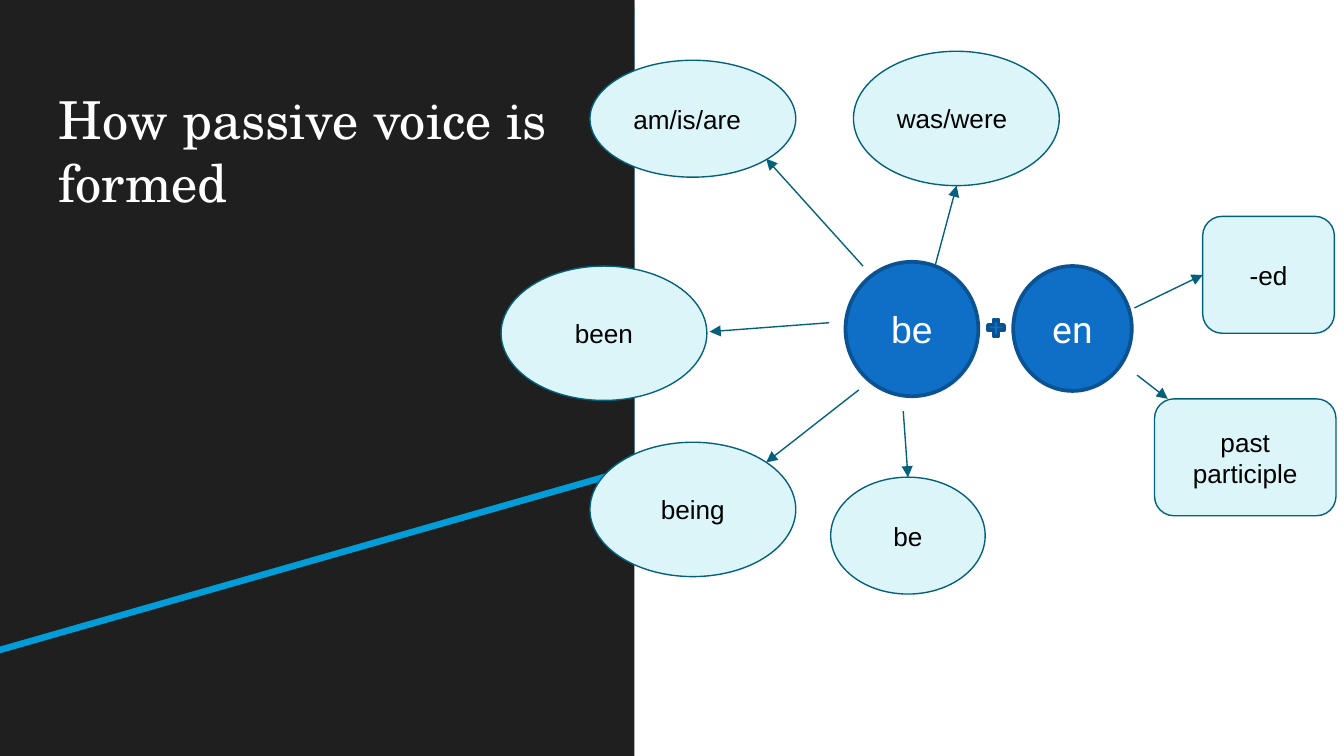
from lxml.etree import SubElement
from pptx import Presentation
from pptx.dml.color import RGBColor
from pptx.enum.shapes import MSO_CONNECTOR as Link, MSO_SHAPE as Kind
from pptx.enum.text import MSO_ANCHOR as Anchor, MSO_AUTO_SIZE as Fit, PP_ALIGN as Align
from pptx.oxml.ns import qn
from pptx.util import Cm, Pt

WHITE = RGBColor(0xFF, 0xFF, 0xFF)
BLACK = RGBColor(0x00, 0x00, 0x00)
DARK = RGBColor(0x1F, 0x1F, 0x1F)
SKY = RGBColor(0x00, 0x9D, 0xD9)
PALE = RGBColor(0xDB, 0xF5, 0xF9)
TEAL = RGBColor(0x04, 0x61, 0x7B)
BLUE = RGBColor(0x0F, 0x6F, 0xC6)
NAVY = RGBColor(0x0B, 0x52, 0x92)

WIDE, HIGH = 25.4, 14.29
PANEL = 11.99


class Board:
    """Holds the slide and the shared look of its parts."""

    def __init__(self, deck):
        self.slide = deck.slides.add_slide(deck.slide_layouts[5])
        self.shapes = self.slide.shapes

    def paint(self, shape, fill, line=None, width=0.75):
        shape.shadow.inherit = False
        shape.fill.solid()
        shape.fill.fore_color.rgb = fill
        if line is None:
            shape.line.fill.background()
        else:
            shape.line.color.rgb = line
            shape.line.width = Pt(width)

    def label(self, shape, text, size, color, font="Arial",
              align=Align.CENTER, anchor=Anchor.MIDDLE, inset=0.25):
        frame = shape.text_frame
        frame.text = text
        frame.word_wrap = True
        frame.auto_size = Fit.NONE
        frame.vertical_anchor = anchor
        frame.margin_left = frame.margin_right = Cm(0.25)
        frame.margin_top = frame.margin_bottom = Cm(inset)
        para = frame.paragraphs[0]
        para.alignment = align
        face = para.runs[0].font
        face.name, face.size, face.color.rgb = font, Pt(size), color

    def title(self, text, *box):
        shape = self.shapes.title
        shape.left, shape.top, shape.width, shape.height = map(Cm, box)
        self.label(shape, text, 28, WHITE, "TeX Gyre Schola", Align.LEFT, Anchor.TOP)
        # Bring the title in front of the panel
        self.shapes._spTree.append(shape._element)

    def area(self, points, fill):
        dots = [(Cm(x), Cm(y)) for x, y in points]
        outline = self.shapes.build_freeform(*dots[0])
        outline.add_line_segments(dots[1:], close=True)
        self.paint(outline.convert_to_shape(), fill)

    def block(self, kind, box, fill, line=None, width=0.75):
        shape = self.shapes.add_shape(kind, *map(Cm, box))
        self.paint(shape, fill, line, width)
        return shape

    def leaf(self, kind, text, box, align=Align.CENTER):
        shape = self.block(kind, box, PALE, TEAL)
        self.label(shape, text, 14, BLACK, align=align)
        return shape

    def core(self, text, box, font):
        shape = self.block(Kind.OVAL, box, BLUE, NAVY, 2)
        self.label(shape, text, 20, WHITE, font, inset=0.13)

    def arrow(self, start, end, goal=None, side=0):
        line = self.shapes.add_connector(Link.STRAIGHT, *map(Cm, start + end))
        if goal is not None:
            line.end_connect(goal, side)
        line.line.color.rgb = TEAL
        line.line.width = Pt(0.75)
        SubElement(line.line._get_or_add_ln(), qn("a:tailEnd"), type="triangle")
        SubElement(line._element.spPr, qn("a:effectLst"))


def main():
    deck = Presentation()
    deck.slide_width, deck.slide_height = Cm(WIDE), Cm(HIGH)
    board = Board(deck)

    # Dark panel with a slanted stripe
    board.block(Kind.RECTANGLE, (0, 0, PANEL, HIGH), DARK)
    for drop, fill in ((0.13, SKY), (0, DARK)):
        board.area([(0, drop), (PANEL, drop), (PANEL, 8.79 + drop), (0, 12.22 + drop)], fill)
    board.title("How passive voice is formed", 0.86, 1.4, 10.29, 6.96)

    # Forms of the verb
    board.leaf(Kind.OVAL, "am/is/are", (11.15, 1.14, 3.89, 2.21), Align.LEFT)
    was = board.leaf(Kind.OVAL, "was/were", (16.13, 0.97, 3.89, 2.54), Align.LEFT)
    board.leaf(Kind.OVAL, "been", (9.47, 5.03, 3.89, 2.54))
    board.leaf(Kind.OVAL, "being", (11.15, 8.36, 3.89, 2.54))
    base = board.leaf(Kind.OVAL, "be", (15.7, 9.02, 2.92, 2.21))

    # Endings
    past = board.leaf(Kind.ROUNDED_RECTANGLE, "-ed", (22.73, 4.09, 2.49, 2.21))
    board.leaf(Kind.ROUNDED_RECTANGLE, "past participle", (21.82, 7.54, 3.43, 2.21))

    # Arrows from the two cores; ellipses number their sites differently,
    # so only a top site (0) is joined there
    board.arrow((15.67, 6.1), (13.41, 6.27))
    board.arrow((16.31, 5.03), (14.48, 3.0))
    board.arrow((16.23, 7.37), (14.48, 8.74))
    board.arrow((17.07, 7.77), (17.17, 9.02), base, 0)
    board.arrow((17.65, 5.11), (18.08, 3.51))
    board.arrow((21.44, 5.82), (22.73, 5.18), past, 1)
    board.arrow((21.49, 7.09), (22.07, 7.54))

    # Cores: be + en
    board.core("be", (15.98, 4.95, 2.51, 2.54), "Arial")
    board.core("en", (19.15, 5.03, 2.24, 2.36), "Roboto")
    board.block(Kind.MATH_PLUS, (18.62, 5.99, 0.41, 0.41), BLUE, NAVY, 2)

    deck.save("out.pptx")


if __name__ == "__main__":
    main()
